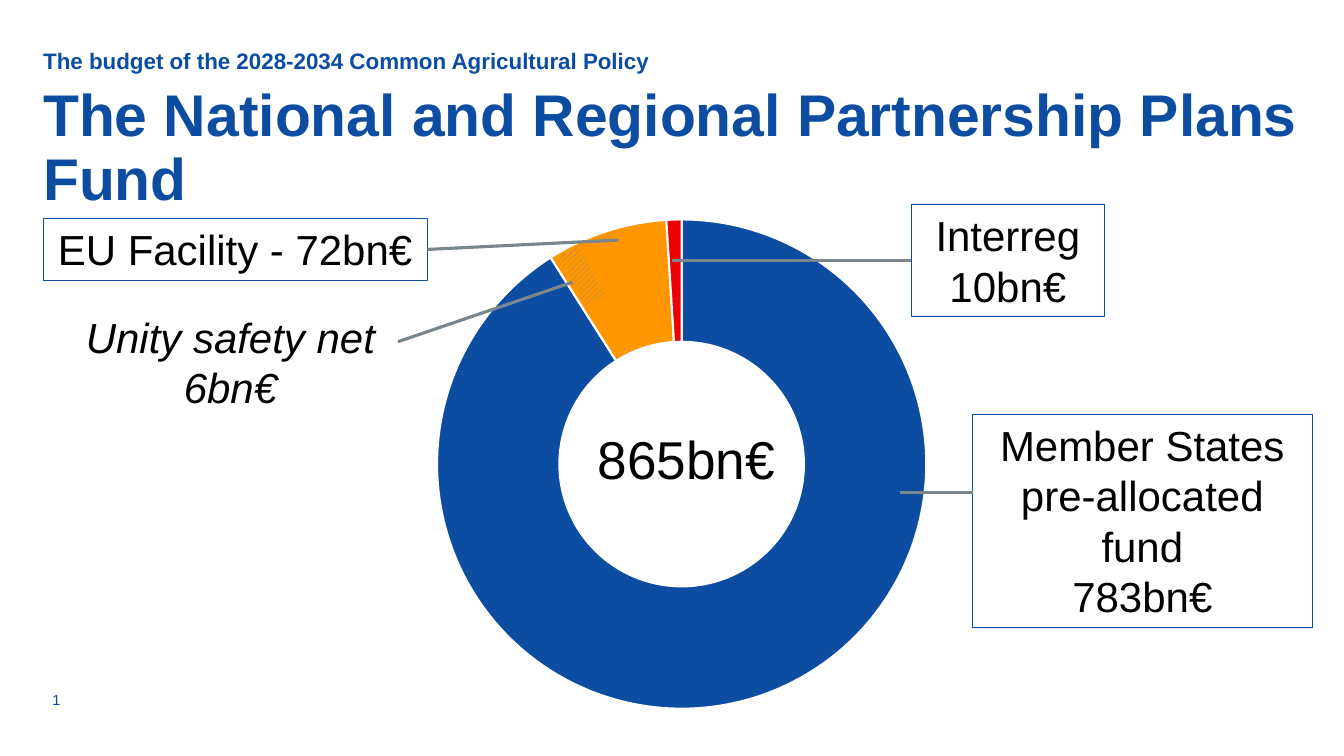
from lxml import etree
from pptx import Presentation
from pptx import util as u
from pptx.chart.data import CategoryChartData
from pptx.dml.color import RGBColor
from pptx.enum import chart as ch, dml, shapes, text
from pptx.oxml import parse_xml
from pptx.oxml.ns import nsdecls, qn

BLUE = RGBColor(0x0C, 0x4D, 0xA2)
YELLOW = RGBColor(0xFD, 0xE0, 0x21)
SKY = RGBColor(0x00, 0xBC, 0xFF)
GREEN = RGBColor(0x28, 0xDC, 0x78)
ORANGE = RGBColor(0xFF, 0x96, 0x00)
RED = RGBColor(0xED, 0x00, 0x00)
GREY = RGBColor(0x7A, 0x86, 0x8E)
BLACK = RGBColor(0, 0, 0)
WHITE = RGBColor(0xFF, 0xFF, 0xFF)


def cm(*lengths):
    return [u.Cm(n) for n in lengths]


class Deck:
    font = "Arial"

    def __init__(self):
        self.prs = Presentation()
        self.prs.slide_width, self.prs.slide_height = cm(33.87, 19.05)
        self.s = self.prs.slides.add_slide(self.prs.slide_layouts[5])

    def style(self, font, size, color, bold=False, italic=False):
        font.name, font.size = self.font, u.Pt(size)
        font.bold, font.italic = bold, italic
        font.color.rgb = color

    def fill_text(self, sp, lines, size, color, align=text.PP_ALIGN.LEFT,
                  anchor=text.MSO_ANCHOR.TOP, inset=True, spacing=None, **look):
        tf = sp.text_frame
        tf.word_wrap, tf.vertical_anchor = True, anchor
        if not inset:
            tf.margin_left = tf.margin_right = tf.margin_top = tf.margin_bottom = 0
        for i, line in enumerate(lines):
            p = tf.add_paragraph() if i else tf.paragraphs[0]
            p.text, p.alignment = line, align
            if spacing:
                p.line_spacing = spacing
            self.style(p.font, size, color, **look)

    def title(self, at, line):
        sp = self.s.shapes.title
        sp.left, sp.top, sp.width, sp.height = cm(*at)
        self.fill_text(sp, [line], 42, BLUE, inset=False, spacing=0.9, bold=True)
        sp.text_frame.auto_size = text.MSO_AUTO_SIZE.NONE

    def label(self, at, line, size, color, **look):
        sp = self.s.shapes.add_textbox(*cm(*at))
        self.fill_text(sp, [line], size, color, **look)

    def slide_number(self, at, number):
        sp = self.s.shapes.add_textbox(*cm(*at))
        self.fill_text(sp, [number], 10.5, BLUE, inset=False,
                       anchor=text.MSO_ANCHOR.MIDDLE)
        r = sp.text_frame.paragraphs[0].runs[0]
        self.style(r.font, 10.5, BLUE)
        r._r.tag = qn("a:fld")
        r._r.set("id", "{B6F15528-21DE-4FAA-801E-634DDDAF4B2B}")
        r._r.set("type", "slidenum")

    def box(self, at, line_color, width=0.75, fill=None):
        sp = self.s.shapes.add_shape(shapes.MSO_SHAPE.RECTANGLE, *cm(*at))
        sp.shadow.inherit = False
        sp.line.color.rgb, sp.line.width = line_color, u.Pt(width)
        if fill is None:
            sp.fill.background()
        else:
            sp.fill.solid()
            sp.fill.fore_color.rgb = fill
        return sp

    def callout(self, at, lines, line_color=BLUE, fill=None, italic=False):
        sp = self.box(at, line_color, fill=fill)
        self.fill_text(sp, lines, 30, BLACK, text.PP_ALIGN.CENTER, italic=italic)
        return sp

    def hatch(self, at, angle):
        sp = self.box(at, ORANGE, 1)
        sp.rotation = angle
        sp.fill.patterned()
        sp.fill.pattern = dml.MSO_PATTERN.WIDE_UPWARD_DIAGONAL
        sp.fill.fore_color.rgb, sp.fill.back_color.rgb = GREY, ORANGE

    def leader(self, start, end, target=None, side=None):
        line = self.s.shapes.add_connector(
            shapes.MSO_CONNECTOR.STRAIGHT, *cm(*start, *end))
        line.line.color.rgb, line.line.width = GREY, u.Pt(2.25)
        etree.SubElement(line._element.spPr, qn("a:effectLst"))
        if target is not None:
            line.end_connect(target, side)

    def doughnut(self, at, values, colors):
        data = CategoryChartData()
        data.categories = [str(i + 1) for i in range(len(values))]
        data.add_series("Series 1", values)
        chart = self.s.shapes.add_chart(
            ch.XL_CHART_TYPE.DOUGHNUT, *cm(*at), data).chart
        chart.has_legend = chart.has_title = False
        self.style(chart.font, 10, BLACK)
        plot = chart.plots[0]
        plot.vary_by_categories = True
        plot.has_data_labels = False
        hole = plot._element.find(qn("c:holeSize"))
        if hole is None:
            hole = parse_xml(f'<c:holeSize {nsdecls("c")}/>')
            plot._element.append(hole)
        hole.set("val", "75")
        for i, color in enumerate(colors):
            part = plot.series[0].points[i].format
            part.fill.solid()
            part.fill.fore_color.rgb = color
            part.line.color.rgb, part.line.width = WHITE, u.Pt(1.5)


def main():
    d = Deck()
    d.slide_number((1.32, 17.12, 2.06, 1.02), "2")
    d.label((1.09, 1.12, 15.39, 1.02),
            "The budget of the 2028-2034 Common Agricultural Policy",
            16, BLUE, inset=False, spacing=1.1, bold=True)
    d.title((1.09, 2.16, 32.33, 2.64), "The National and Regional Partnership Plans Fund")
    d.doughnut((7.11, 5.18, 20.14, 13.03), (91, None, None, None, 8, 1),
               (BLUE, YELLOW, SKY, GREEN, ORANGE, RED))
    d.label((14.81, 10.62, 5.87, 1.88), "865bn€", 38, BLACK)

    d.callout((24.51, 10.44, 8.56, 5.38), ["Member States pre-allocated fund", "783bn€"])
    d.leader((22.68, 12.4), (24.51, 12.4))

    interreg = d.callout((22.96, 5.16, 4.88, 2.82), ["Interreg", "10bn€"])
    d.leader((16.94, 6.57), (22.96, 6.57), interreg, 1)

    facility = d.callout((1.09, 5.51, 9.68, 1.55), ["EU Facility - 72bn€"])
    d.leader((15.57, 6.05), (10.77, 6.28), facility, 3)

    d.hatch((13.94, 6.65, 1.47, 0.61), 61.3)
    d.callout((0.64, 7.72, 10.34, 2.82), ["Unity safety net", "6bn€"],
              WHITE, WHITE, italic=True)
    d.leader((14.43, 7.11), (10.03, 8.61))
    d.prs.save("out.pptx")


if __name__ == "__main__":
    main()
